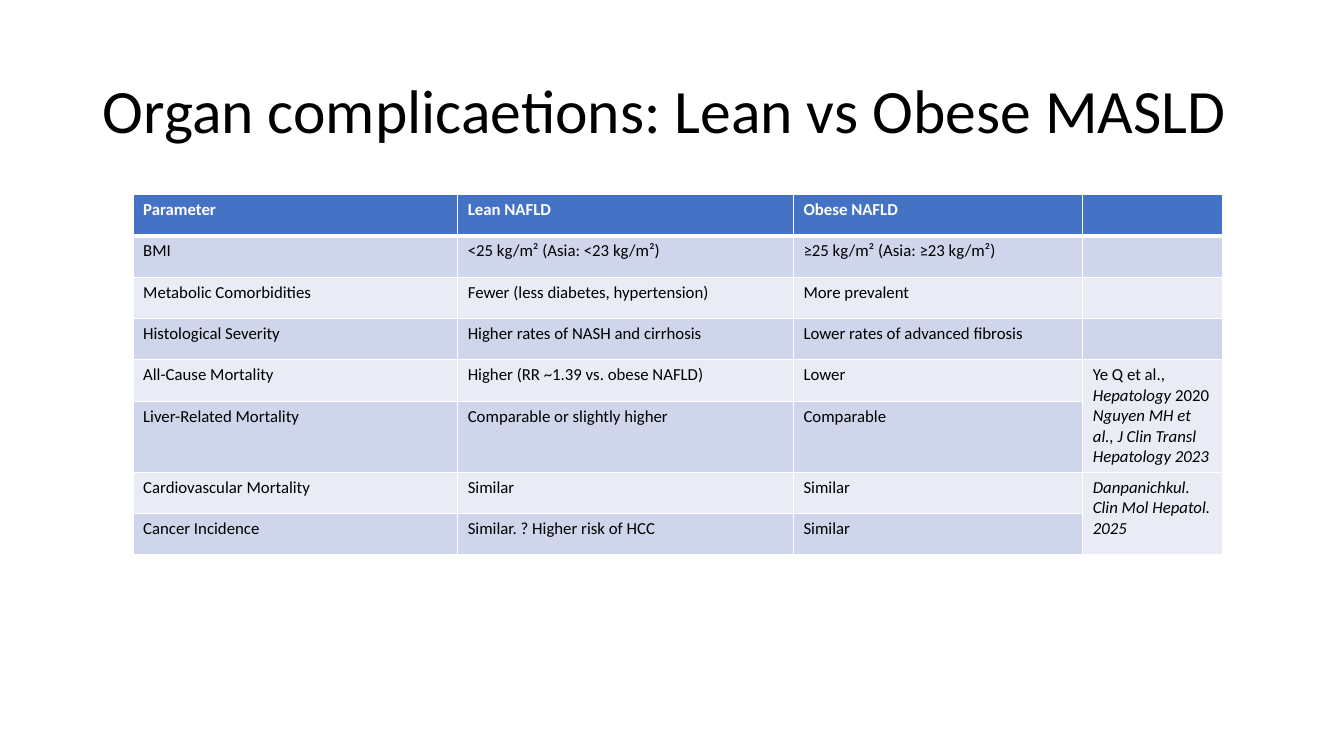
from dataclasses import dataclass

from lxml.etree import SubElement
from pptx import Presentation
from pptx.dml.color import RGBColor as Rgb
from pptx.enum.text import MSO_ANCHOR as Anchor, PP_ALIGN as Align
from pptx.oxml.ns import qn
from pptx.util import Inches, Pt

WHITE, BLACK, BLUE = "FFFFFF", "000000", "4472C4"
BANDS = ("E9EBF5", "CFD5EA")
WIDTHS = (3.22, 3.33, 2.87, 1.39)
HIGH = 0.41


@dataclass
class Run:
    text: str
    italic: bool = False


@dataclass
class Source:
    row: int
    lines: list[list[Run]]


ROWS = [
    ("Parameter", "Lean NAFLD", "Obese NAFLD"),
    ("BMI", "<25 kg/m² (Asia: <23 kg/m²)", "≥25 kg/m² (Asia: ≥23 kg/m²)"),
    ("Metabolic Comorbidities", "Fewer (less diabetes, hypertension)", "More prevalent"),
    ("Histological Severity", "Higher rates of NASH and cirrhosis", "Lower rates of advanced fibrosis"),
    ("All-Cause Mortality", "Higher (RR ~1.39 vs. obese NAFLD)", "Lower"),
    ("Liver-Related Mortality", "Comparable or slightly higher", "Comparable"),
    ("Cardiovascular Mortality", "Similar", "Similar"),
    ("Cancer Incidence", "Similar. ? Higher risk of HCC", "Similar"),
]
SOURCES = [
    Source(4, [
        [Run("Ye Q et al., "), Run("Hepatology", True), Run(" 2020")],
        [Run("Nguyen MH et al., J Clin Transl Hepatology 2023", True)],
    ]),
    Source(6, [[Run("Danpanichkul. Clin Mol Hepatol. 2025", True)]]),
]


def color(code: str) -> Rgb:
    return Rgb.from_string(code)


def style(font, shade: str, **values) -> None:
    for name, value in {"name": "Calibri", **values}.items():
        setattr(font, name, value)
    font.color.rgb = color(shade)


def write(frame, lines: list[list[Run]], shade: str, **values) -> None:
    for i, line in enumerate(lines):
        para = frame.add_paragraph() if i else frame.paragraphs[0]
        for part in line:
            run = para.add_run()
            run.text = part.text
            style(run.font, shade, italic=part.italic, **values)


def border(cell, base: int) -> None:
    props = cell._tc.get_or_add_tcPr()
    for side, width in {"L": 1, "R": 1, "T": 1, "B": base}.items():
        line = SubElement(props, qn(f"a:ln{side}"), w=str(Pt(width)))
        fill = SubElement(line, qn("a:solidFill"))
        SubElement(fill, qn("a:srgbClr"), val=WHITE)


def paint(cell, row: int) -> None:
    border(cell, 1 if row else 3)
    cell.fill.solid()
    cell.fill.fore_color.rgb = color(BANDS[row % 2] if row else BLUE)


def head(slide) -> None:
    title = slide.shapes.title
    box = {"left": 0.92, "top": 0.4, "width": 11.5, "height": 1.45}
    for name, value in box.items():
        setattr(title, name, Inches(value))
    frame = title.text_frame
    frame.vertical_anchor = Anchor.MIDDLE
    frame.word_wrap = True
    write(frame, [[Run("Organ complicaetions: Lean vs Obese MASLD")]], BLACK, size=Pt(44))
    para = frame.paragraphs[0]
    para.alignment = Align.LEFT
    para.line_spacing = 0.9


def grid(slide) -> None:
    table = slide.shapes.add_table(
        len(ROWS), len(WIDTHS), Inches(1.32), Inches(1.93),
        Inches(sum(WIDTHS)), Inches(HIGH * len(ROWS)),
    ).table
    for col, width in zip(table.columns, WIDTHS):
        col.width = Inches(width)
    for r, texts in enumerate(ROWS):
        table.rows[r].height = Inches(HIGH)
        for c in range(len(WIDTHS)):
            paint(table.cell(r, c), r)
        for c, text in enumerate(texts):
            shade = BLACK if r else WHITE
            write(table.cell(r, c).text_frame, [[Run(text)]], shade, size=Pt(12), bold=not r)
    last = len(WIDTHS) - 1
    for note in SOURCES:
        cell = table.cell(note.row, last)
        cell.merge(table.cell(note.row + 1, last))
        write(cell.text_frame, note.lines, BLACK, size=Pt(12), bold=False)


def main() -> None:
    deck = Presentation()
    deck.slide_width, deck.slide_height = Inches(13.33), Inches(7.5)
    slide = deck.slides.add_slide(deck.slide_layouts[5])
    head(slide)
    grid(slide)
    deck.save("out.pptx")


if __name__ == "__main__":
    main()
